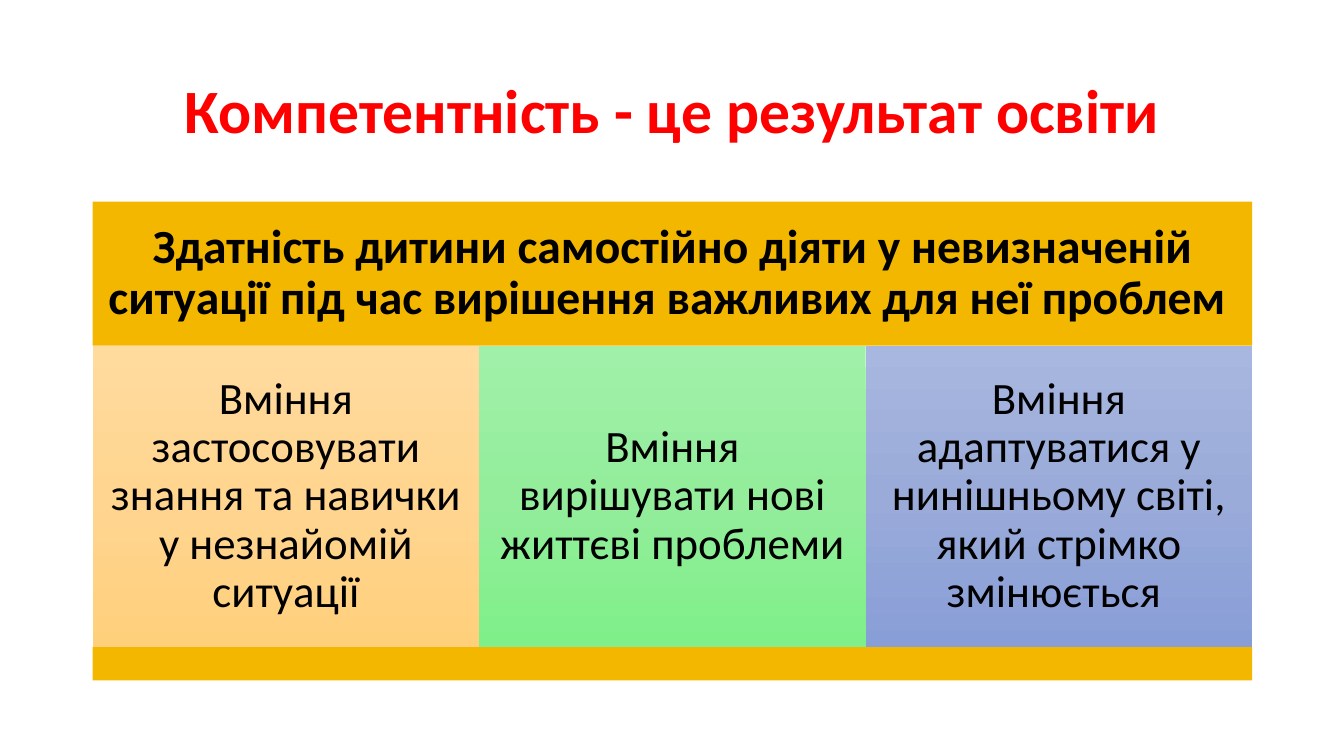
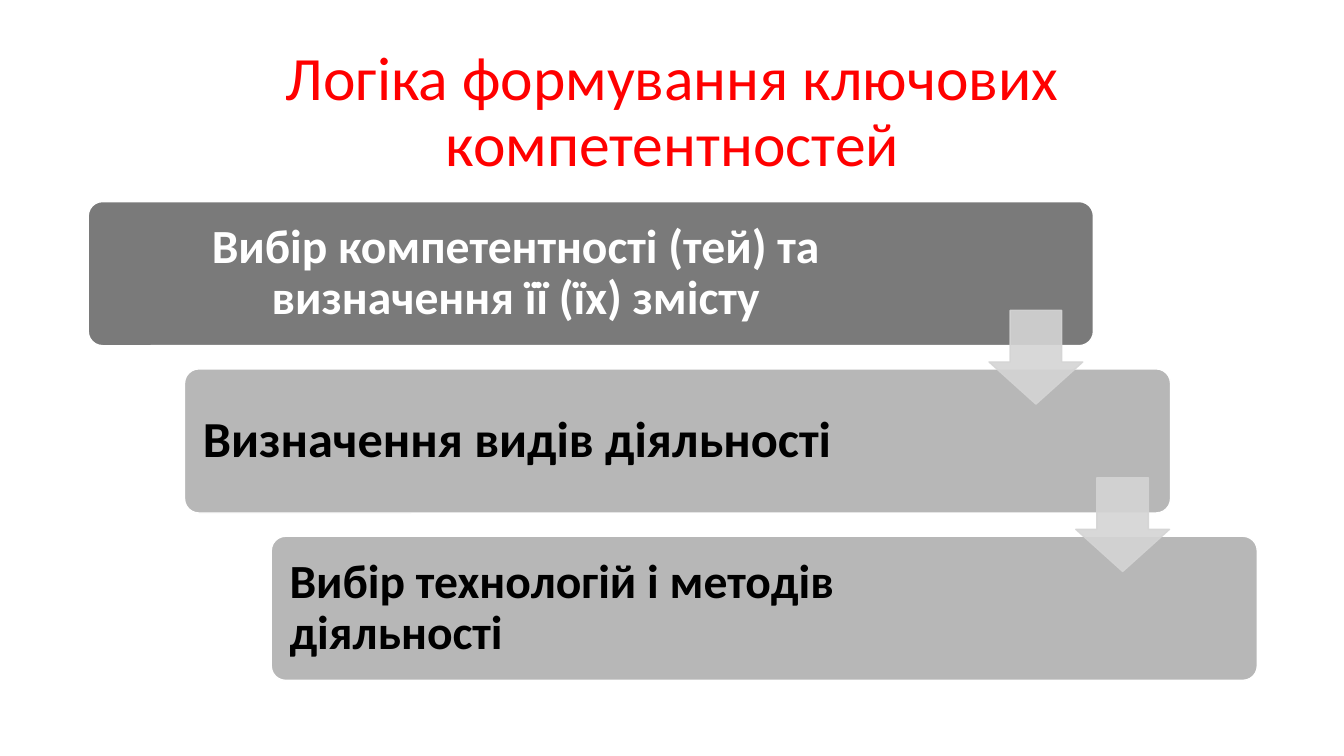
from collections import namedtuple
from copy import deepcopy

from lxml.etree import SubElement
from pptx import Presentation
from pptx.dml.color import RGBColor
from pptx.enum.shapes import MSO_SHAPE
from pptx.enum.text import MSO_ANCHOR, PP_ALIGN
from pptx.oxml.ns import qn
from pptx.util import Inches, Pt

Box = namedtuple("Box", "left top width height")

FONT = "Calibri"
COLORS = {
    "title": "FF0000",
    "band": "F4B700",
    "dark": "7A7A7A",
    "gray": "B7B7B7",
    "arrow": "D4D4D4",
    "white": "FFFFFF",
    "black": "000000",
}
TITLE_BOX = Box(0.92, 0.4, 11.5, 1.45)
CONTENT_BOX = Box(0.92, 2, 11.5, 4.75)

ABILITIES = [
    ("Вміння застосовувати знання та навички у незнайомій ситуації",
     ("FFDB9E", "FFD590", "FFD07C")),
    ("Вміння вирішувати нові життєві проблеми",
     ("A1F0A9", "93ED9B", "7FEF89")),
    ("Вміння адаптуватися у нинішньому світі, який стрімко змінюється ",
     ("A8B7DF", "9AABD9", "889ED7")),
]

Step = namedtuple("Step", "text width size fill color align right_inset")
STEPS = [
    Step("Вибір компетентності (тей) та визначення її (їх) змісту",
         9.97, 34, "dark", "white", PP_ALIGN.CENTER, 1.63),
    Step("Визначення видів діяльності",
         9.78, 36, "gray", "black", PP_ALIGN.LEFT, 1.94),
    Step("Вибір технологій і методів діяльності",
         9.78, 34, "gray", "black", PP_ALIGN.LEFT, 1.94),
]


def rgb(name):
    return RGBColor.from_string(COLORS.get(name, name))


def write(shape, text, size, color="black", bold=False,
          align=PP_ALIGN.CENTER, insets=(0.1, 0.05, 0.1, 0.05)):
    frame = shape.text_frame
    frame.word_wrap = True
    frame.vertical_anchor = MSO_ANCHOR.MIDDLE
    (frame.margin_left, frame.margin_top,
     frame.margin_right, frame.margin_bottom) = map(Inches, insets)
    frame.text = text
    paragraph = frame.paragraphs[0]
    paragraph.alignment = align
    paragraph.line_spacing = 0.9
    font = paragraph.runs[0].font
    font.name, font.size, font.bold = FONT, Pt(size), bold
    font.color.rgb = rgb(color)


def add_block(slide, kind, box, fill=None, line=None):
    block = slide.shapes.add_shape(kind, *map(Inches, box))
    block.shadow.inherit = False
    if fill:
        block.fill.solid()
        block.fill.fore_color.rgb = rgb(fill)
    if line:
        block.line.color.rgb = rgb(line)
        block.line.width = Pt(1)
    else:
        block.line.fill.background()
    return block


def set_gradient(block, stop_colors):
    block.fill.gradient()
    block.fill.gradient_angle = 270
    stop_list = block._element.spPr.find(".//" + qn("a:gsLst"))
    stop_list.insert(1, deepcopy(stop_list[0]))
    for index, stop in enumerate(block.fill.gradient_stops):
        stop.position = index / 2
        stop.color.rgb = rgb(stop_colors[index])


def set_opacity(block, percent):
    for color in block._element.spPr.iter(qn("a:srgbClr")):
        SubElement(color, qn("a:alpha")).set("val", str(percent * 1000))


def add_title(slide, box, text, bold):
    title = slide.shapes.add_textbox(*map(Inches, box))
    write(title, text, 44, "title", bold)


def add_ability_table(slide, box):
    header_height, footer_height = 1.43, 0.33
    header = add_block(slide, MSO_SHAPE.RECTANGLE,
                       box._replace(height=header_height), "band")
    write(header,
          "Здатність дитини самостійно діяти у невизначеній ситуації "
          "під час вирішення важливих для неї проблем ",
          34, bold=True, insets=(0.14,) * 4)

    column_width = box.width / len(ABILITIES)
    column_height = box.height - header_height - footer_height
    for index, (text, stop_colors) in enumerate(ABILITIES):
        column = add_block(slide, MSO_SHAPE.RECTANGLE, Box(
            box.left + index * column_width, box.top + header_height,
            column_width, column_height))
        set_gradient(column, stop_colors)
        write(column, text, 32, insets=(0.13,) * 4)

    add_block(slide, MSO_SHAPE.RECTANGLE, Box(
        box.left, box.top + box.height - footer_height,
        box.width, footer_height), "band")


def add_staircase(slide, box):
    step_height, shift, arrow_size = 1.43, 0.86, 0.93
    pitch = (box.height - step_height) / (len(STEPS) - 1)
    first_center = box.left + 4.94
    for index, step in enumerate(STEPS):
        stair = add_block(slide, MSO_SHAPE.ROUNDED_RECTANGLE, Box(
            first_center + index * shift - step.width / 2,
            box.top + index * pitch, step.width, step_height),
            step.fill, "white")
        stair.adjustments[0] = 0.1
        write(stair, step.text, step.size, step.color, True, step.align,
              (0.14, 0.14, step.right_inset, 0.14))

    for index in range(len(STEPS) - 1):
        arrow = add_block(slide, MSO_SHAPE.DOWN_ARROW, Box(
            box.left + 8.89 + index * shift, box.top + 1.08 + index * pitch,
            arrow_size, arrow_size), "arrow", "arrow")
        arrow.adjustments[0] = 0.55
        arrow.adjustments[1] = 0.45
        set_opacity(arrow, 90)


def main():
    deck = Presentation()
    deck.slide_width, deck.slide_height = Inches(13.33), Inches(7.5)
    blank = deck.slide_layouts[6]

    result = deck.slides.add_slide(blank)
    add_title(result, TITLE_BOX, "Компетентність - це результат освіти", True)
    add_ability_table(result, CONTENT_BOX)

    logic = deck.slides.add_slide(blank)
    add_title(logic, TITLE_BOX,
              "Логіка формування ключових компетентностей", False)
    add_staircase(logic, CONTENT_BOX)

    deck.save("out.pptx")


if __name__ == "__main__":
    main()
